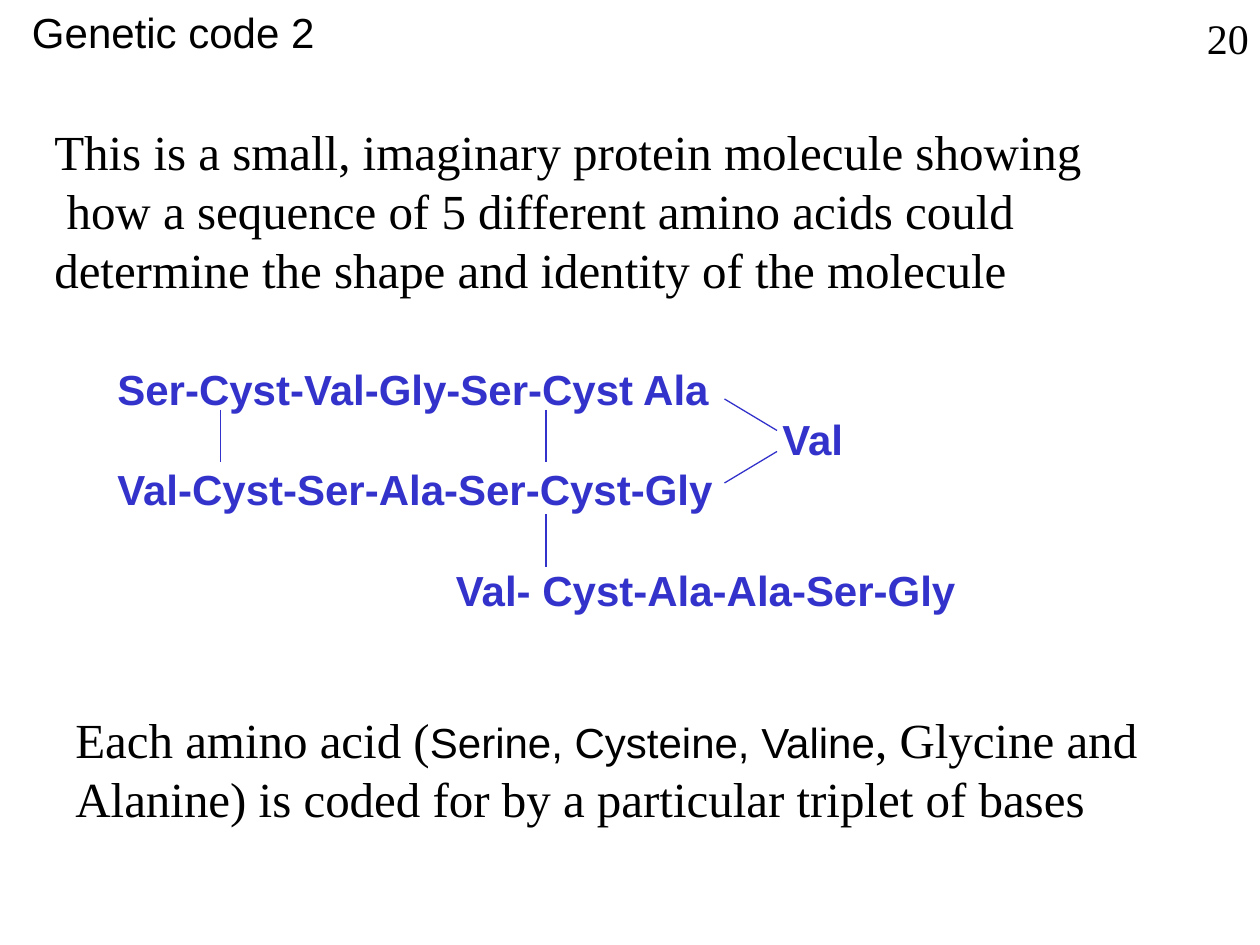
from dataclasses import dataclass

from lxml.etree import SubElement
from pptx import Presentation
from pptx.dml.color import RGBColor
from pptx.enum.shapes import MSO_CONNECTOR
from pptx.enum.text import MSO_ANCHOR, PP_ALIGN
from pptx.oxml.ns import qn
from pptx.util import Pt


@dataclass(frozen=True)
class Theme:
    ink: RGBColor = RGBColor(0x00, 0x00, 0x00)
    molecule: RGBColor = RGBColor(0x33, 0x33, 0xCC)
    sans: str = "Arial"
    serif: str = "Times New Roman"
    label_size: int = 24
    prose_size: int = 28
    line_pitch: float = 1.2
    bond_width: float = 0.75


THEME = Theme()


def style(paragraph, font_name, size, color=THEME.ink, bold=False):
    font = paragraph.font
    font.name, font.size, font.bold = font_name, Pt(size), bold
    font.color.rgb = color
    paragraph.line_spacing = Pt(size * THEME.line_pitch)


def add_text_frame(shapes, box, wrap=True):
    frame = shapes.add_textbox(*map(Pt, box)).text_frame
    frame.word_wrap = wrap
    return frame


def add_prose(shapes, box, lines, size=THEME.prose_size, wrap=True):
    """Each line is a list of (text, is_sans) runs; sans runs are label-sized."""
    frame = add_text_frame(shapes, box, wrap)
    for i, line in enumerate(lines):
        paragraph = frame.add_paragraph() if i else frame.paragraphs[0]
        style(paragraph, THEME.serif, size)
        for text, is_sans in line:
            run = paragraph.add_run()
            run.text = text
            if is_sans:
                run.font.name, run.font.size = THEME.sans, Pt(THEME.label_size)


def place_title(title, box, text):
    title.left, title.top, title.width, title.height = map(Pt, box)
    frame = title.text_frame
    frame.text = text
    frame.vertical_anchor = MSO_ANCHOR.MIDDLE
    heading = frame.paragraphs[0]
    heading.alignment = PP_ALIGN.CENTER
    style(heading, THEME.sans, THEME.label_size)


def add_bond(shapes, x1, y1, x2, y2):
    bond = shapes.add_connector(MSO_CONNECTOR.STRAIGHT, *map(Pt, (x1, y1, x2, y2)))
    bond.line.color.rgb = THEME.molecule
    bond.line.width = Pt(THEME.bond_width)
    SubElement(bond._element.spPr, qn("a:effectLst"))


def add_molecule(shapes, box):
    """Amino acid chains in one text, joined by bonds placed from the box corner."""
    left, top = box[:2]
    group = shapes.add_group_shape().shapes
    frame = add_text_frame(group, box)
    row_pitch = THEME.label_size * THEME.line_pitch
    chains = [  # residues, indent, rows skipped above
        ("Ser-Cyst-Val-Gly-Ser-Cyst Ala", 0, 0),
        ("Val", 380, 0),
        ("Val-Cyst-Ser-Ala-Ser-Cyst-Gly", 0, 0),
        ("Val- Cyst-Ala-Ala-Ser-Gly", 193.5, 1),
    ]
    for i, (residues, indent, skipped) in enumerate(chains):
        chain = frame.add_paragraph() if i else frame.paragraphs[0]
        chain.text = residues
        chain.space_before = Pt(skipped * row_pitch)
        chain._p.get_or_add_pPr().set("marL", str(Pt(indent)))
        style(chain, THEME.sans, THEME.label_size, THEME.molecule, bold=True)

    bridges = [(x, y, x, y + 30) for x, y in ((66, 30), (252, 30), (252, 90))]
    turn = [(354, 24, 384, 42), (354, 72, 384, 54)]
    for x1, y1, x2, y2 in bridges + turn:
        add_bond(group, left + x1, top + y1, left + x2, top + y2)


def add_page_number(shapes, box, number):
    """One unwrapped line, without side insets so that the digits fit the box."""
    frame = add_text_frame(shapes, box, wrap=False)
    frame.margin_left = frame.margin_right = 0
    frame.text = number
    style(frame.paragraphs[0], THEME.serif, THEME.label_size)


def build_slide(presentation):
    slide = presentation.slides.add_slide(presentation.slide_layouts[5])
    shapes = slide.shapes
    add_molecule(shapes, (60, 204, 535, 151.2))
    add_prose(shapes, (24, 66, 642, 108), [
        [("This is a small, imaginary protein molecule showing", False)],
        [(" how a sequence of 5 different amino acids could determine "
          "the shape and identity of the molecule", False)],
    ])
    add_prose(shapes, (36, 402, 631, 74.4), [
        [("Each amino acid (", False), ("Serine, Cysteine, Valine", True),
         (", Glycine and", False)],
        [("Alanine) is coded for by a particular triplet of bases", False)],
    ], wrap=False)
    place_title(shapes.title, (0, 0, 198, 36), "Genetic code 2")
    add_page_number(shapes, (689.7, 3.6, 30, 36), "20")


def main():
    presentation = Presentation()
    presentation.slide_width, presentation.slide_height = Pt(720), Pt(540)
    build_slide(presentation)
    presentation.save("out.pptx")


if __name__ == "__main__":
    main()
